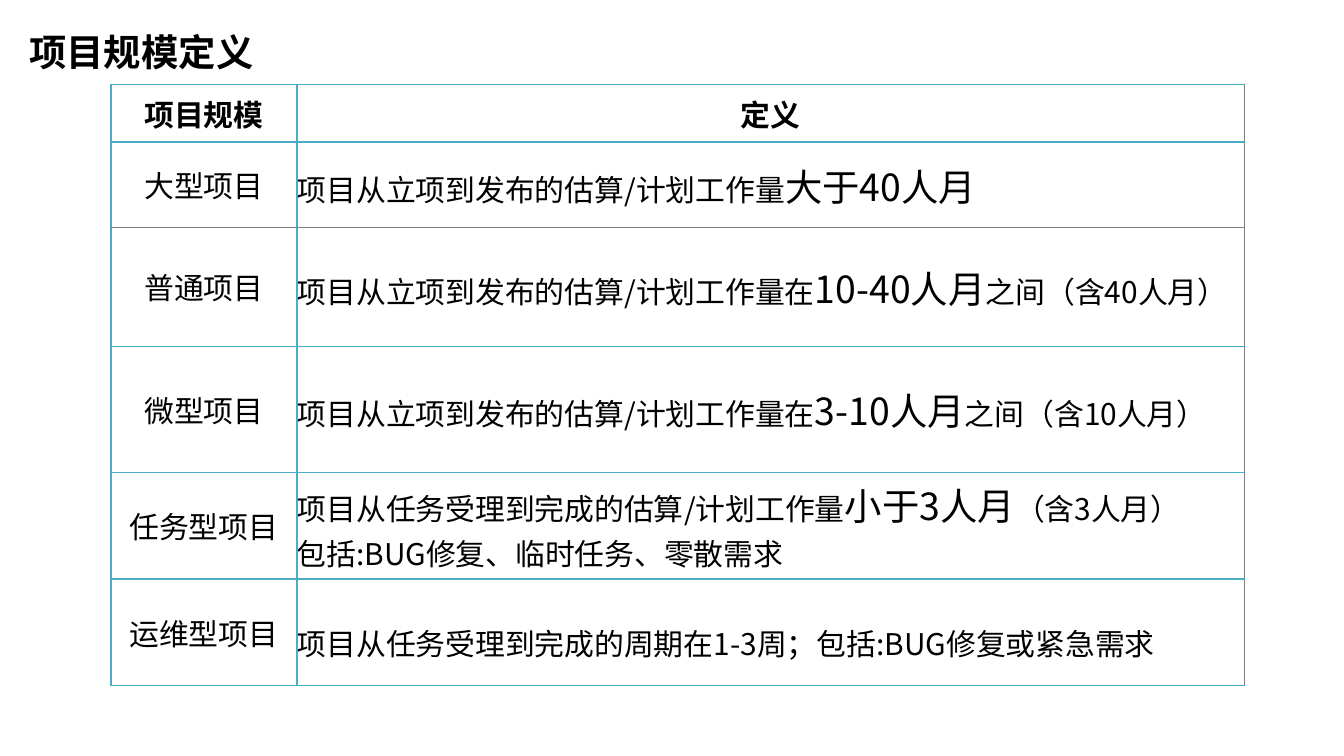
from lxml.etree import SubElement as add_child
from pptx import Presentation
from pptx.dml.color import RGBColor
from pptx.enum.text import MSO_ANCHOR as Anchor, PP_ALIGN as Align
from pptx.oxml.ns import qn
from pptx.util import Pt

FONT = "Noto Sans CJK SC"
BLACK, TEAL, GRAY = "000000", "4BACC6", "7F7F7F"
COLUMN_WIDTHS = [99.5, 507.5]
ROW_HEIGHTS = [31, 45.5, 64, 67.5, 57, 57]
LARGE_ROW = 1
PLAN = "项目从立项到发布的估算/计划工作量"
TASK = "项目从任务受理到完成的估算/计划工作量"

SCALES = [
    ("项目规模", [["定义"]]),
    ("大型项目", [[PLAN, "大于40人月"]]),
    ("普通项目", [[PLAN + "在", "10-40人月", "之间（含40人月）"]]),
    ("微型项目", [[PLAN + "在", "3-10人月", "之间（含10人月）"]]),
    ("任务型项目", [[TASK, "小于3人月", "（含3人月）"],
               ["包括:BUG修复、临时任务、零散需求"]]),
    ("运维型项目", [["项目从任务受理到完成的周期在1-3周；包括:BUG修复或紧急需求"]]),
]


def color(value):
    return RGBColor.from_string(value)


def write_paragraph(para, parts, size, bold=False, align=Align.LEFT):
    para.alignment = align
    para.font.size = Pt(size)
    para.font.bold = bold
    para.font.color.rgb = color(BLACK)
    para.font.name = FONT
    defaults = para._p.pPr.find(qn("a:defRPr"))
    add_child(defaults, qn("a:ea"), typeface=FONT)
    for index, part in enumerate(parts):
        span = para.add_run()
        span.text = part
        if index == 1:
            span.font.size = Pt(20)


def draw_border(cell, side, value, width):
    line = add_child(cell._tc.get_or_add_tcPr(), qn(f"a:ln{side}"), w=str(Pt(width)))
    fill = add_child(line, qn("a:solidFill"))
    add_child(fill, qn("a:srgbClr"), val=value)


def fill_cell(cell, lines, thin_sides, bold, align):
    cell.margin_left = cell.margin_right = cell.margin_top = cell.margin_bottom = 0
    cell.vertical_anchor = Anchor.MIDDLE
    for side in "LRTB":
        value, width = (GRAY, 0.5) if side in thin_sides else (TEAL, 1)
        draw_border(cell, side, value, width)
    cell.fill.background()
    frame = cell.text_frame
    for index, parts in enumerate(lines):
        para = frame.add_paragraph() if index else frame.paragraphs[0]
        write_paragraph(para, parts, 16, bold, align)


def add_title(page, left, top, width, height):
    box = page.shapes.add_textbox(Pt(left), Pt(top), Pt(width), Pt(height))
    box.text_frame.word_wrap = True
    write_paragraph(box.text_frame.paragraphs[0], ["项目规模定义"], 20, bold=True)


def add_scale_table(page, left, top, width, height):
    table = page.shapes.add_table(len(SCALES), len(COLUMN_WIDTHS),
                                  Pt(left), Pt(top), Pt(width), Pt(height)).table
    table.first_row = table.horz_banding = False
    for column, share in zip(table.columns, COLUMN_WIDTHS):
        column.width = Pt(width * share / sum(COLUMN_WIDTHS))
    for row, share in zip(table.rows, ROW_HEIGHTS):
        row.height = Pt(height * share / sum(ROW_HEIGHTS))
    for index, (name, definition) in enumerate(SCALES):
        header = index == 0
        thin = {LARGE_ROW: "B", LARGE_ROW + 1: "T"}.get(index, "")
        fill_cell(table.cell(index, 0), [[name]], thin, header, Align.CENTER)
        fill_cell(table.cell(index, 1), definition, thin + "R", header,
                  Align.CENTER if header else Align.LEFT)
    last = table.cell(len(SCALES) - 1, 1)
    last.text_frame.paragraphs[0].line_spacing = 1.5


def main():
    deck = Presentation()
    deck.slide_width, deck.slide_height = Pt(720), Pt(405)
    page = deck.slides.add_slide(deck.slide_layouts[6])
    add_title(page, 8.5, 12.25, 142, 31.5)
    add_scale_table(page, 59.5, 45.25, 607, 322)
    deck.save("out.pptx")


if __name__ == "__main__":
    main()
